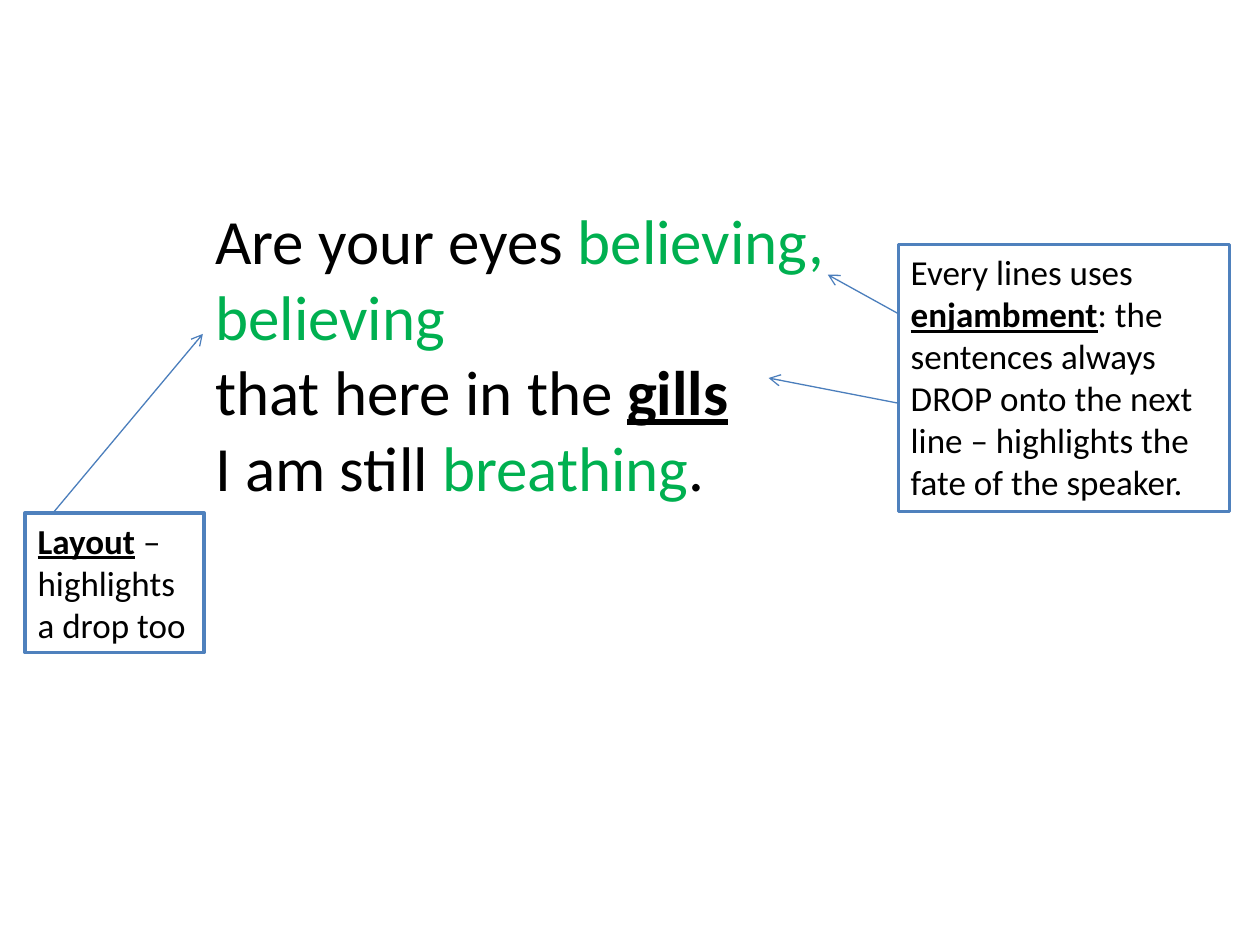
from lxml import etree
from pptx import Presentation
from pptx.dml.color import RGBColor
from pptx.enum.shapes import MSO_CONNECTOR, MSO_SHAPE
from pptx.enum.text import MSO_ANCHOR, MSO_AUTO_SIZE, PP_ALIGN
from pptx.oxml.ns import qn
from pptx.util import Inches, Pt

COLORS = {
    "text": "000000",
    "highlight": "00B050",
    "box_fill": "FFFFFF",
    "box_line": "4F81BD",
    "arrow": "4B7EBC",
}
PLAIN = {}
GREEN = {"color": "highlight"}
KEY_TERM = {"bold": True, "underline": True}


def rgb(name):
    return RGBColor.from_string(COLORS[name])


class AnnotatedSlide:
    font_name = "Calibri"

    def __init__(self, presentation):
        self.slide = presentation.slides.add_slide(presentation.slide_layouts[6])

    def set_text(self, shape, lines, size):
        """Fill a shape with lines, each a list of (text, format values) runs."""
        frame = shape.text_frame
        frame.word_wrap = True
        frame.auto_size = MSO_AUTO_SIZE.SHAPE_TO_FIT_TEXT
        frame.vertical_anchor = MSO_ANCHOR.TOP
        for index, runs in enumerate(lines):
            paragraph = frame.add_paragraph() if index else frame.paragraphs[0]
            paragraph.alignment = PP_ALIGN.LEFT
            for text, values in runs:
                run = paragraph.add_run()
                run.text = text
                font_values = {"name": self.font_name, "size": Pt(size), **values}
                color = font_values.pop("color", "text")
                for attribute, value in font_values.items():
                    setattr(run.font, attribute, value)
                run.font.color.rgb = rgb(color)

    def add_verse(self, left, top, width, height, lines):
        box = self.slide.shapes.add_textbox(
            Inches(left), Inches(top), Inches(width), Inches(height))
        self.set_text(box, lines, 36)

    def add_note(self, left, top, width, height, runs):
        note = self.slide.shapes.add_shape(
            MSO_SHAPE.RECTANGLE,
            Inches(left), Inches(top), Inches(width), Inches(height))
        note.shadow.inherit = False
        note.fill.solid()
        note.fill.fore_color.rgb = rgb("box_fill")
        note.line.color.rgb = rgb("box_line")
        note.line.width = Pt(2)
        self.set_text(note, [runs], 20)

    def add_arrow(self, start, end):
        arrow = self.slide.shapes.add_connector(
            MSO_CONNECTOR.STRAIGHT, *(Inches(value) for value in (*start, *end)))
        arrow.line.color.rgb = rgb("arrow")
        arrow.line.width = Pt(0.75)
        properties = arrow.element.spPr
        etree.SubElement(properties.find(qn("a:ln")), qn("a:tailEnd"), type="arrow")
        etree.SubElement(properties, qn("a:effectLst"))


def main():
    presentation = Presentation()
    presentation.slide_width = Inches(10)
    presentation.slide_height = Inches(7.5)
    slide = AnnotatedSlide(presentation)

    slide.add_verse(1.61, 1.55, 8.39, 2.52, [
        [("Are your eyes ", PLAIN), ("believing,", GREEN)],
        [("believing", GREEN)],
        [("that here in the ", PLAIN), ("gills", KEY_TERM)],
        [("I am still ", PLAIN), ("breathing", GREEN), (".", PLAIN)],
    ])
    slide.add_note(0.2, 4.07, 1.42, 1.11, [
        ("Layout", KEY_TERM),
        (" – highlights a drop too", PLAIN),
    ])
    slide.add_note(7.13, 1.94, 2.63, 2.12, [
        ("Every lines uses ", PLAIN),
        ("enjambment", KEY_TERM),
        (": the sentences always DROP onto the next line – "
         "highlights the fate of the speaker.", PLAIN),
    ])
    for start, end in [
        ((7.13, 2.49), (6.57, 2.18)),
        ((7.13, 3.2), (6.1, 3)),
        ((0.43, 4.06), (1.61, 2.65)),
    ]:
        slide.add_arrow(start, end)

    presentation.save("out.pptx")


if __name__ == "__main__":
    main()
